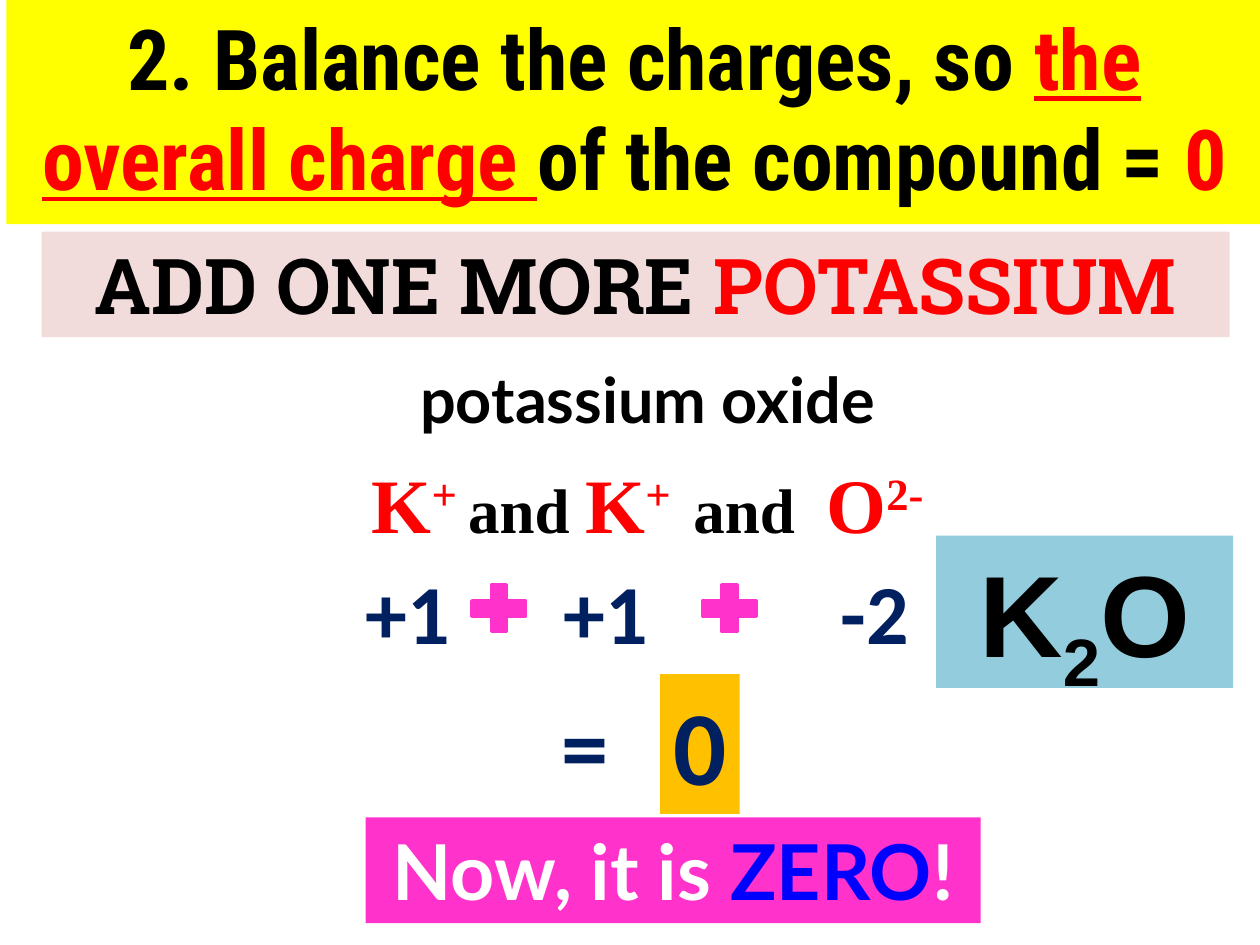
import pptx
import pptx.dml.color
import pptx.enum.shapes
import pptx.enum.text
import pptx.util
from pptx.util import Cm

COLORS = {
    "black": "000000",
    "white": "FFFFFF",
    "red": "FF0000",
    "blue": "0000FF",
    "navy": "002060",
    "yellow": "FFFF00",
    "amber": "FFC000",
    "pink": "FF33CC",
    "rose": "F2DCDB",
    "aqua": "93CDDD",
}


def rgb(name):
    return pptx.dml.color.RGBColor.from_string(COLORS[name])


def add_span(para, text, font, size, color, underline=False, baseline=0):
    span = para.add_run()
    span.text = text
    span.font.name = font
    span.font.size = pptx.util.Pt(size)
    span.font.bold = True
    span.font.underline = underline
    span.font.color.rgb = rgb(color)
    if baseline:
        span.font._element.set("baseline", str(baseline * 1000))


def add_text(page, place, font, lines, fill=None, wrap=True, grow=True, gap=0):
    box = page.shapes.add_textbox(*(Cm(value) for value in place))
    if fill:
        box.fill.solid()
        box.fill.fore_color.rgb = rgb(fill)
    frame = box.text_frame
    frame.word_wrap = wrap
    sizing = pptx.enum.text.MSO_AUTO_SIZE
    frame.auto_size = sizing.SHAPE_TO_FIT_TEXT if grow else sizing.NONE
    for index, spans in enumerate(lines):
        para = frame.add_paragraph() if index else frame.paragraphs[0]
        para.alignment = pptx.enum.text.PP_ALIGN.CENTER
        if index:
            para.space_before = pptx.util.Pt(gap)
        for text, size, color, *style in spans:
            add_span(para, text, font if isinstance(font, str) else font[index],
                     size, color, *style)


def add_plus(page, left):
    plus = page.shapes.add_shape(
        pptx.enum.shapes.MSO_SHAPE.MATH_PLUS, Cm(left), Cm(11.63), Cm(1.47), Cm(1.27))
    plus.shadow.inherit = False
    plus.fill.solid()
    plus.fill.fore_color.rgb = rgb("pink")
    plus.line.color.rgb = rgb("pink")
    plus.line.width = pptx.util.Pt(2)


def add_charge(page, text, left, width):
    add_text(page, (left, 11.18, width, 2.31), "Calibri",
             [[(text, 48, "navy")]], wrap=False)


def main():
    deck = pptx.Presentation()
    deck.slide_width, deck.slide_height = Cm(25.4), Cm(19.05)
    page = deck.slides.add_slide(deck.slide_layouts[6])

    add_text(page, (0.13, 0, 25.32, 4.52), "Roboto Condensed", [[
        ("2. Balance the charges, so ", 48, "black"),
        ("the overall charge ", 48, "red", True),
        ("of the compound = ", 48, "black"),
        ("0", 48, "red"),
    ]], fill="yellow", grow=False)

    add_text(page, (5.64, 7.14, 14.83, 4.19), ("Lato", "Times New Roman"), [
        [("potassium oxide", 36, "black")],
        [
            ("K", 44, "red"), ("+ ", 44, "red", False, 30),
            ("and ", 36, "black"),
            ("K", 44, "red"), ("+  ", 44, "red", False, 30),
            ("and  ", 36, "black"),
            ("O", 44, "red"), ("2-", 44, "red", False, 30),
        ],
    ], grow=False, gap=12)

    add_text(page, (13.31, 13.59, 1.6, 2.82), "Calibri",
             [[("0", 60, "navy")]], fill="amber", wrap=False)
    add_text(page, (11.05, 13.72, 1.47, 2.57), "Calibri",
             [[("=", 54, "navy")]], wrap=False)

    for text, left, width in (("+1", 7.11, 2.24), ("+1", 11.1, 2.24), ("-2", 16.69, 1.9)):
        add_charge(page, text, left, width)

    add_text(page, (7.37, 16.48, 12.4, 2.13), "Lato", [[
        ("Now, it is ", 44, "white"), ("ZERO", 44, "blue"), ("!", 44, "white"),
    ]], fill="pink", wrap=False)

    add_text(page, (18.87, 10.8, 5.99, 3.07), "Arial", [[
        ("K", 66, "black"), ("2", 66, "black", False, -25), ("O", 66, "black"),
    ]], fill="aqua")

    add_text(page, (0.84, 4.67, 23.95, 2.13), "Roboto Slab", [[
        ("ADD ONE MORE ", 44, "black"), ("POTASSIUM", 44, "red"),
    ]], fill="rose", wrap=False)

    for left in (9.32, 13.97):
        add_plus(page, left)

    deck.save("out.pptx")


if __name__ == "__main__":
    main()
